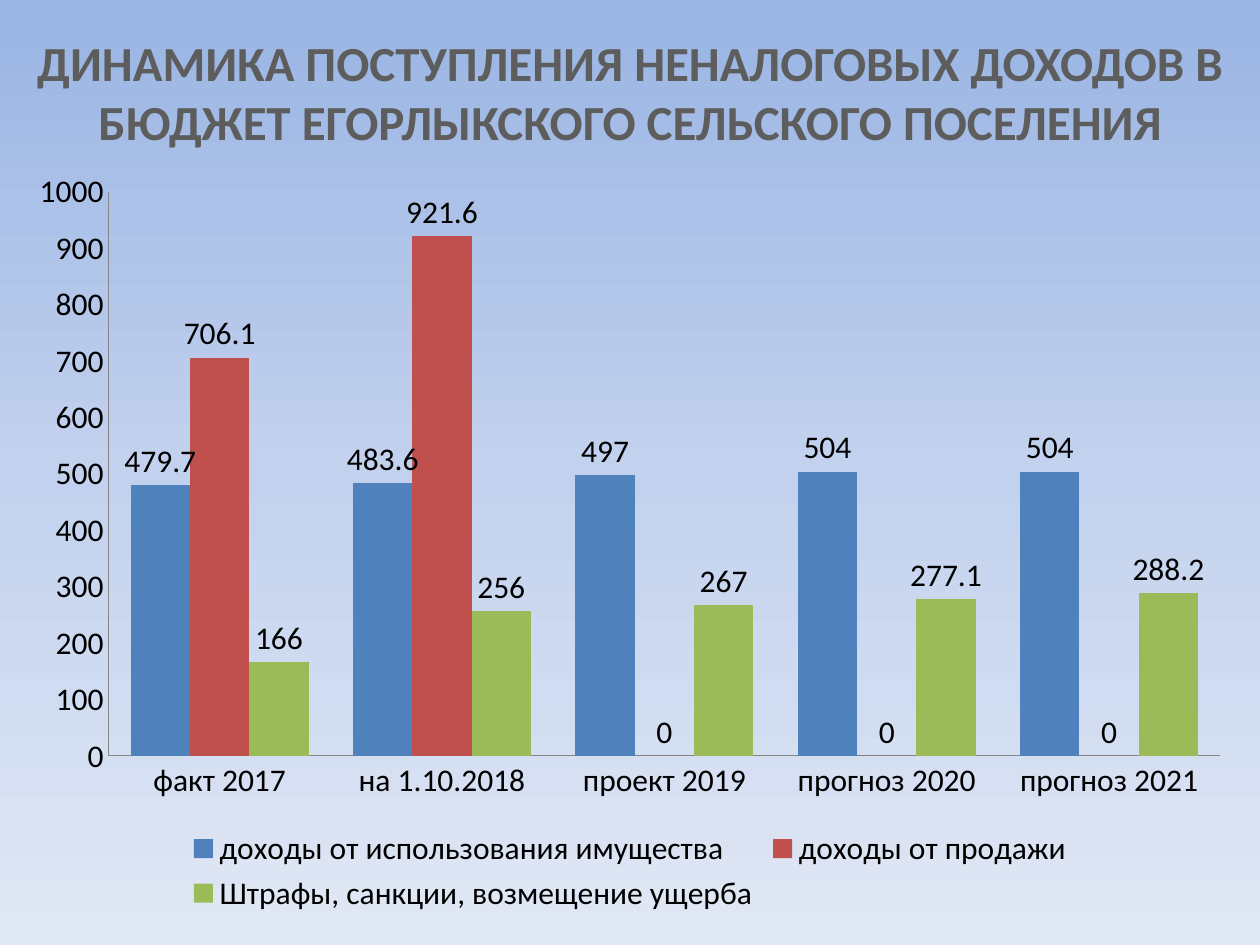
from lxml.etree import SubElement
from pptx import Presentation
from pptx.chart.data import CategoryChartData
from pptx.dml.color import RGBColor
from pptx.enum.chart import XL_CHART_TYPE, XL_LABEL_POSITION, XL_LEGEND_POSITION, XL_TICK_MARK
from pptx.enum.text import MSO_AUTO_SIZE, PP_ALIGN
from pptx.oxml.ns import qn
from pptx.util import Inches, Pt

THEME = {
    "font": "Calibri",
    "title_size": Pt(28),
    "chart_size": Pt(18),
    "title": RGBColor.from_string("5D5D5D"),
    "text": RGBColor.from_string("000000"),
    "axis": RGBColor.from_string("868686"),
    "background": [(0, "9AB5E4"), (50, "C2D1ED"), (100, "E1E8F5")],
}
CATEGORIES = ["факт 2017", "на 1.10.2018", "проект 2019", "прогноз 2020", "прогноз 2021"]
INCOME = [
    ("доходы от использования имущества", "4F81BD", [479.7, 483.6, 497, 504, 504]),
    ("доходы от продажи", "C0504D", [706.1, 921.6, 0, 0, 0]),
    ("Штрафы, санкции, возмещение ущерба", "9BBB59", [166, 256, 267, 277.1, 288.2]),
]

deck = Presentation()
deck.slide_width = Inches(10)
deck.slide_height = Inches(7.5)
page = deck.slides.add_slide(deck.slide_layouts[6])

margin = Inches(0.12)
content_width = deck.slide_width - 2 * margin
title_top = Inches(0.21)
chart_top = deck.slide_height // 6
chart_height = Inches(6.04)

background = page.background.fill
background.gradient()
background.gradient_angle = 270
stops = page._element.find(".//" + qn("a:gsLst"))
for stop in list(stops):
    stops.remove(stop)
for position, color in THEME["background"]:
    stop = SubElement(stops, qn("a:gs"), pos=str(position * 1000))
    SubElement(stop, qn("a:srgbClr"), val=color)

box = page.shapes.add_textbox(margin, title_top, content_width, chart_top - title_top)
box.text_frame.word_wrap = True
box.text_frame.auto_size = MSO_AUTO_SIZE.SHAPE_TO_FIT_TEXT
para = box.text_frame.paragraphs[0]
para.alignment = PP_ALIGN.CENTER
span = para.add_run()
span.text = "ДИНАМИКА ПОСТУПЛЕНИЯ НЕНАЛОГОВЫХ ДОХОДОВ В БЮДЖЕТ ЕГОРЛЫКСКОГО СЕЛЬСКОГО ПОСЕЛЕНИЯ"
span.font.name = THEME["font"]
span.font.size = THEME["title_size"]
span.font.bold = True
span.font.color.rgb = THEME["title"]

data = CategoryChartData()
data.categories = CATEGORIES
for name, color, values in INCOME:
    data.add_series(name, values)
chart = page.shapes.add_chart(
    XL_CHART_TYPE.COLUMN_CLUSTERED, margin, chart_top, content_width, chart_height, data
).chart
chart.has_title = False
chart.font.name = THEME["font"]
chart.font.size = THEME["chart_size"]
chart.font.color.rgb = THEME["text"]
chart.has_legend = True
chart.legend.position = XL_LEGEND_POSITION.BOTTOM
chart.legend.include_in_layout = False

for axis in (chart.category_axis, chart.value_axis):
    axis.major_tick_mark = XL_TICK_MARK.NONE
    axis.minor_tick_mark = XL_TICK_MARK.NONE
    axis.has_major_gridlines = False
    axis.format.line.color.rgb = THEME["axis"]
    axis.format.line.width = Pt(0.75)
chart.value_axis.minimum_scale = 0
chart.value_axis.maximum_scale = 1000
chart.value_axis.major_unit = 100

plot = chart.plots[0]
plot.gap_width = 75
plot.overlap = 0
plot.vary_by_categories = False
for series, (name, color, values) in zip(plot.series, INCOME):
    series.format.fill.solid()
    series.format.fill.fore_color.rgb = RGBColor.from_string(color)
    series.invert_if_negative = False
    series.data_labels.show_value = True
    series.data_labels.position = XL_LABEL_POSITION.OUTSIDE_END

deck.save("out.pptx")
